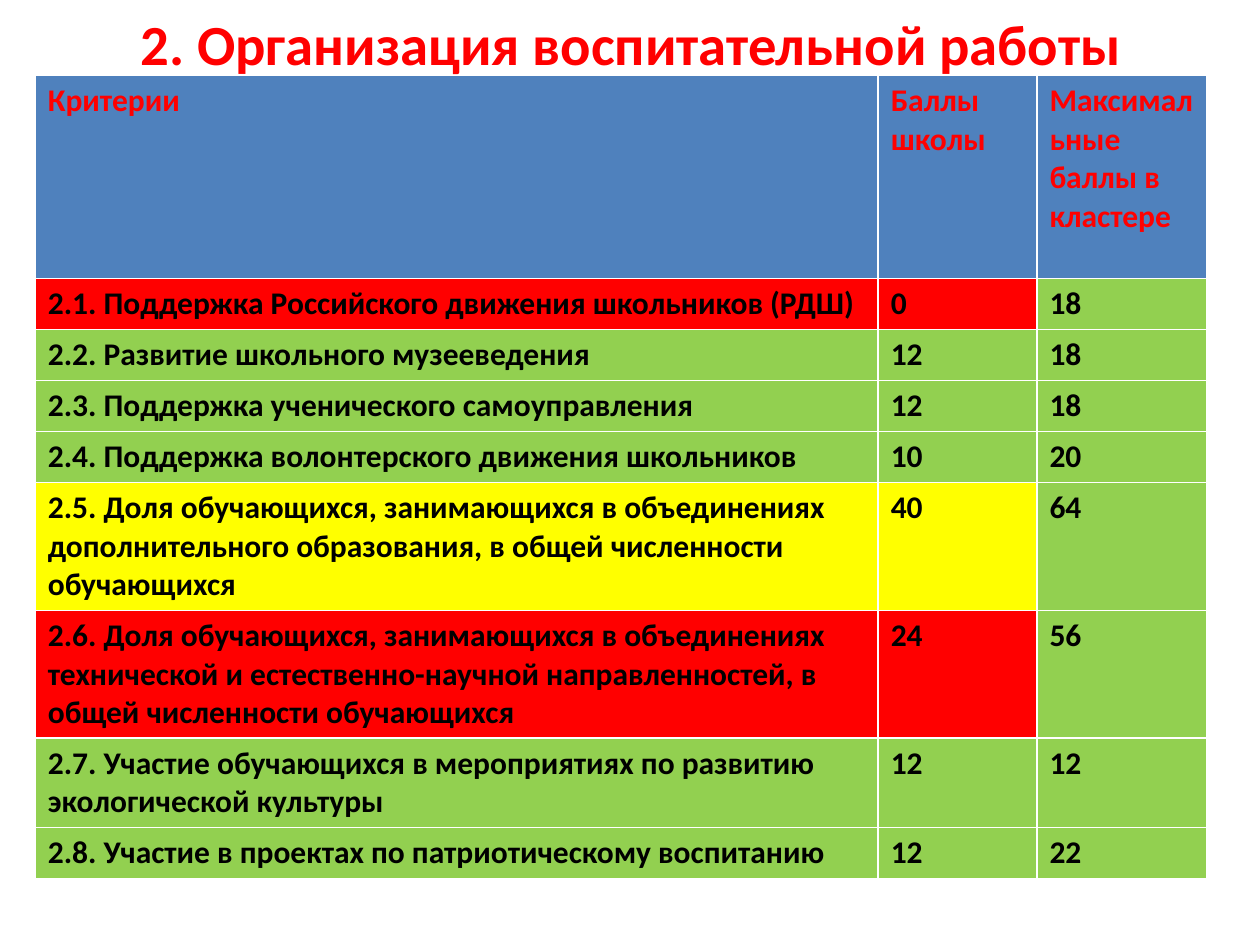
from pptx import Presentation, util as u
from pptx.dml.color import RGBColor
from pptx.enum import text

RED, GREEN, YELLOW, BLUE, BLACK = "FF0000", "92D050", "FFFF00", "4F81BD", "000000"

HEADERS = ("Критерии", "Баллы школы", "Максимальные баллы в кластере")
# criterion, school score, cluster maximum, rating colour, lines of text
CRITERIA = [
    ("2.1. Поддержка Российского движения школьников (РДШ)", 0, 18, RED, 1),
    ("2.2. Развитие школьного музееведения", 12, 18, GREEN, 1),
    ("2.3. Поддержка ученического самоуправления", 12, 18, GREEN, 1),
    ("2.4. Поддержка волонтерского движения школьников", 10, 20, GREEN, 1),
    ("2.5. Доля обучающихся, занимающихся в объединениях дополнительного "
     "образования, в общей численности обучающихся", 40, 64, YELLOW, 3),
    ("2.6. Доля обучающихся, занимающихся в объединениях технической и "
     "естественно-научной направленностей, в общей численности обучающихся",
     24, 56, RED, 3),
    ("2.7. Участие обучающихся в мероприятиях по развитию экологической культуры",
     12, 12, GREEN, 2),
    ("2.8. Участие в проектах по патриотическому воспитанию", 12, 22, GREEN, 1),
]
COLUMN_WIDTHS = (6.69, 1.26, 1.35)
HEADER_HEIGHT = 1.61
LINE_HEIGHT = 0.305
CELL_PADDING = 0.1


def rgb(value):
    return RGBColor.from_string(value)


def write(frame, content, size, color):
    run = frame.paragraphs[0].add_run()
    run.text = content
    formats = {"name": "Calibri", "size": u.Pt(size), "bold": True}
    for attribute, value in formats.items():
        setattr(run.font, attribute, value)
    run.font.color.rgb = rgb(color)


def add_title(slide, left, top, width, height):
    frame = slide.shapes.add_textbox(left, top, width, height).text_frame
    frame.word_wrap = True
    frame.vertical_anchor = text.MSO_ANCHOR.MIDDLE
    write(frame, "2. Организация воспитательной работы", 32.4, RED)
    frame.paragraphs[0].alignment = text.PP_ALIGN.CENTER


def fill_row(table, index, values, fills, color):
    for column, (value, fill) in enumerate(zip(values, fills)):
        cell = table.cell(index, column)
        cell.fill.solid()
        cell.fill.fore_color.rgb = rgb(fill)
        write(cell.text_frame, str(value), 18, color)


def add_score_table(slide, left, top, width):
    """The default table style supplies the white rules between cells."""
    heights = [HEADER_HEIGHT] + [
        lines * LINE_HEIGHT + CELL_PADDING for *_, lines in CRITERIA]
    table = slide.shapes.add_table(
        len(heights), len(HEADERS), left, top, width, u.Inches(sum(heights))).table
    table.horz_banding = False
    for column, column_width in zip(table.columns, COLUMN_WIDTHS):
        column.width = u.Inches(column_width)
    for row, height in zip(table.rows, heights):
        row.height = u.Inches(height)
    fill_row(table, 0, HEADERS, [BLUE] * 3, RED)
    for index, (name, score, maximum, rating, _) in enumerate(CRITERIA, 1):
        fill_row(table, index, (name, score, maximum), (rating, rating, GREEN), BLACK)


def main():
    presentation = Presentation()
    presentation.slide_width, presentation.slide_height = u.Inches(10), u.Inches(7.5)
    slide = presentation.slides.add_slide(presentation.slide_layouts[6])
    add_title(slide, u.Inches(0.51), u.Inches(0), u.Inches(9), u.Inches(0.68))
    add_score_table(slide, u.Inches(0.28), u.Inches(0.6), u.Inches(sum(COLUMN_WIDTHS)))
    presentation.save("out.pptx")


if __name__ == "__main__":
    main()
